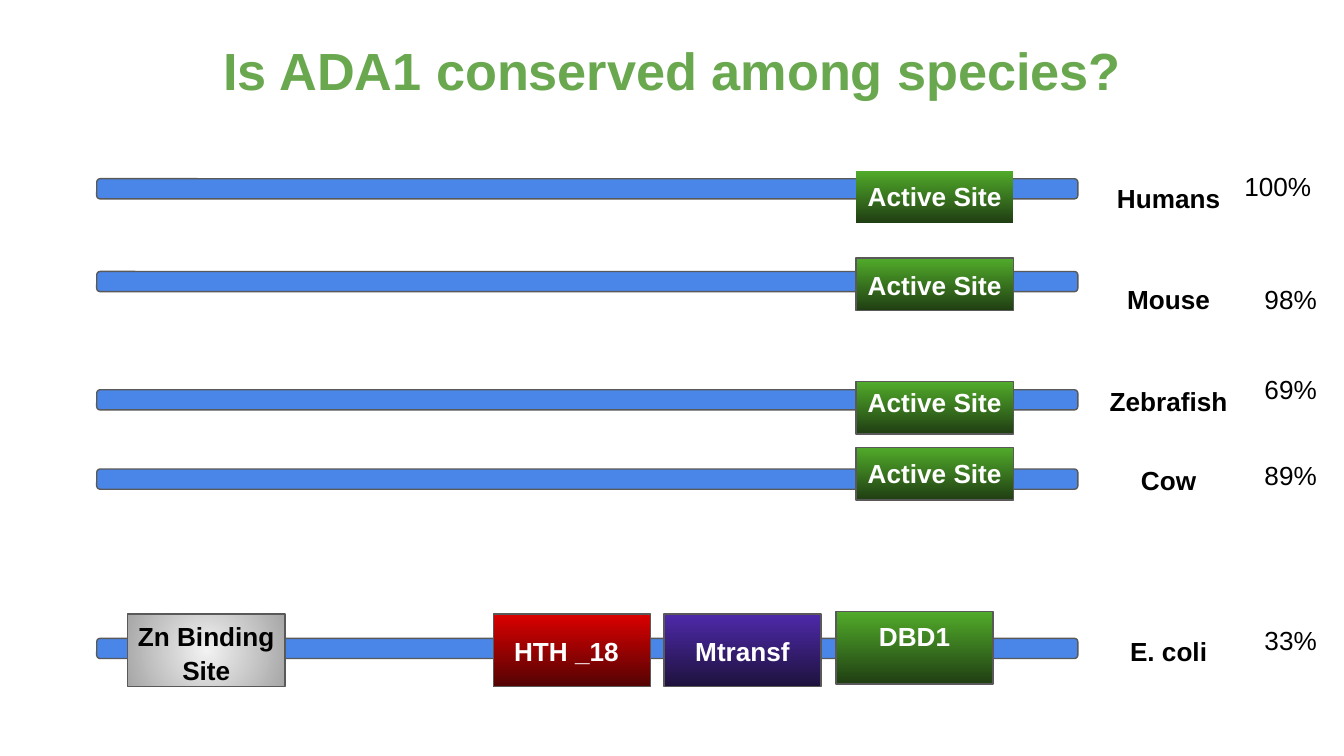
from lxml.etree import SubElement
from pptx import Presentation
from pptx.dml.color import RGBColor
from pptx.enum.shapes import MSO_SHAPE as Shape
from pptx.enum.text import MSO_ANCHOR as Anchor, MSO_AUTO_SIZE as AutoSize, PP_ALIGN as Align
from pptx.oxml.ns import qn
from pptx.util import Pt

COLORS = {
    "title": "6AA84F", "bar": "4A86E8", "outline": "595959",
    "black": "000000", "white": "FFFFFF",
}
GRADIENTS = {
    "green": ("51AB2A", "203E13"), "red": ("DB0000", "540303"),
    "purple": ("4E29AA", "1E123D"), "gray": ("F2F2F2", "A6A6A6"),
}
SITE_LEFT = 458.64
DOMAIN_WIDTH, SITE_HEIGHT, DOMAIN_HEIGHT = 84.24, 28.08, 38.88
LABEL_WIDTH, LABEL_HEIGHT = 97.2, 33.12

SPECIES = [
    ("Humans", 95.76, 89.28, "100%", 659.52, 82.8),
    ("Mouse", 145.44, 143.28, "98%", 670.32, 143.28),
    ("Zebrafish", 208.8, 198, "69%", 670.32, 191.52),
    ("Cow", 251.28, 240.48, "89%", 670.32, 237.6),
    ("E. coli", 342, 331.92, "33%", 670.32, 326.16),
]
ACTIVE_SITES = [(91.44, 88.56), (138.24, 136.08), (204.48, 198.72), (239.76, 236.88)]
DOMAINS = [
    ("Zn Binding\nSite", "gray", "black", 68.4, 329.04, 61.92, 324),
    ("HTH _18", "red", "white", 264.24, 329.04, 254.88, 331.92),
    ("Mtransf", "purple", "white", 355.68, 329.04, 349.2, 331.92),
    ("DBD1", "green", "white", 447.84, 327.6, 441.36, 324),
]


def color(name):
    return RGBColor.from_string(COLORS[name])


def write(frame, text, size=14, fill="black", bold=True, align=Align.CENTER):
    frame.word_wrap = True
    frame.auto_size = AutoSize.NONE
    frame.vertical_anchor = Anchor.TOP
    frame.margin_left = frame.margin_right = Pt(7.2)
    frame.margin_top = frame.margin_bottom = Pt(7.2)
    frame.text = text
    for paragraph in frame.paragraphs:
        paragraph.alignment = align
        paragraph.line_spacing = 1.07
        paragraph.space_before = Pt(0)
        for run in paragraph.runs:
            run.font.name = "Arial"
            run.font.size = Pt(size)
            run.font.bold = bold
            run.font.color.rgb = color(fill)


class SlideBuilder:
    def __init__(self, slide):
        self.slide = slide

    def title(self, text, left, top, width, height):
        shape = self.slide.shapes.title
        shape.left, shape.top, shape.width, shape.height = map(Pt, (left, top, width, height))
        write(shape.text_frame, text, size=28, fill="title")

    def label(self, text, left, top, width=LABEL_WIDTH, height=LABEL_HEIGHT, **style):
        shape = self.slide.shapes.add_textbox(*map(Pt, (left, top, width, height)))
        write(shape.text_frame, text, **style)

    def box(self, kind, left, top, width, height, outlined=True):
        shape = self.slide.shapes.add_shape(kind, *map(Pt, (left, top, width, height)))
        shape.shadow.inherit = False
        if outlined:
            shape.line.color.rgb = color("outline")
            shape.line.width = Pt(0.75)
        else:
            shape.line.fill.background()
        return shape

    def bar(self, top):
        shape = self.box(Shape.ROUNDED_RECTANGLE, 51.84, top, 525.6, 10.8)
        shape.fill.solid()
        shape.fill.fore_color.rgb = color("bar")

    def domain(self, gradient, left, top, height, outlined=True):
        shape = self.box(Shape.RECTANGLE, left, top, DOMAIN_WIDTH, height, outlined)
        shape.fill.gradient()
        shape.fill.gradient_angle = 270
        for stop, value in zip(shape.fill.gradient_stops, GRADIENTS[gradient]):
            stop.color.rgb = RGBColor.from_string(value)
        if gradient == "gray":
            self.make_radial(shape)

    def make_radial(self, shape):
        fill = shape._element.spPr.find(qn("a:gradFill"))
        fill.remove(fill.find(qn("a:lin")))
        circle = SubElement(fill, qn("a:path"), {"path": "circle"})
        SubElement(circle, qn("a:fillToRect"), dict.fromkeys("ltrb", "50000"))


def main():
    presentation = Presentation()
    presentation.slide_width, presentation.slide_height = Pt(720), Pt(405)
    builder = SlideBuilder(presentation.slides.add_slide(presentation.slide_layouts[5]))
    builder.title("Is ADA1 conserved among species?", 24.48, 10.8, 671.04, 45.36)

    for name, bar_top, name_top, share, share_left, share_top in SPECIES:
        builder.bar(bar_top)
        builder.label(name, 572.4, name_top, 107.28, 20.88)
        builder.label(share, share_left, share_top, 720 - share_left,
                      bold=False, align=Align.LEFT)

    for index, (top, text_top) in enumerate(ACTIVE_SITES):
        builder.domain("green", SITE_LEFT, top, SITE_HEIGHT, outlined=index > 0)
        builder.label("Active Site", 452.16, text_top, fill="white")

    for text, gradient, text_color, left, top, text_left, text_top in DOMAINS:
        builder.domain(gradient, left, top, DOMAIN_HEIGHT)
        builder.label(text, text_left, text_top, fill=text_color)

    presentation.save("out.pptx")


if __name__ == "__main__":
    main()
